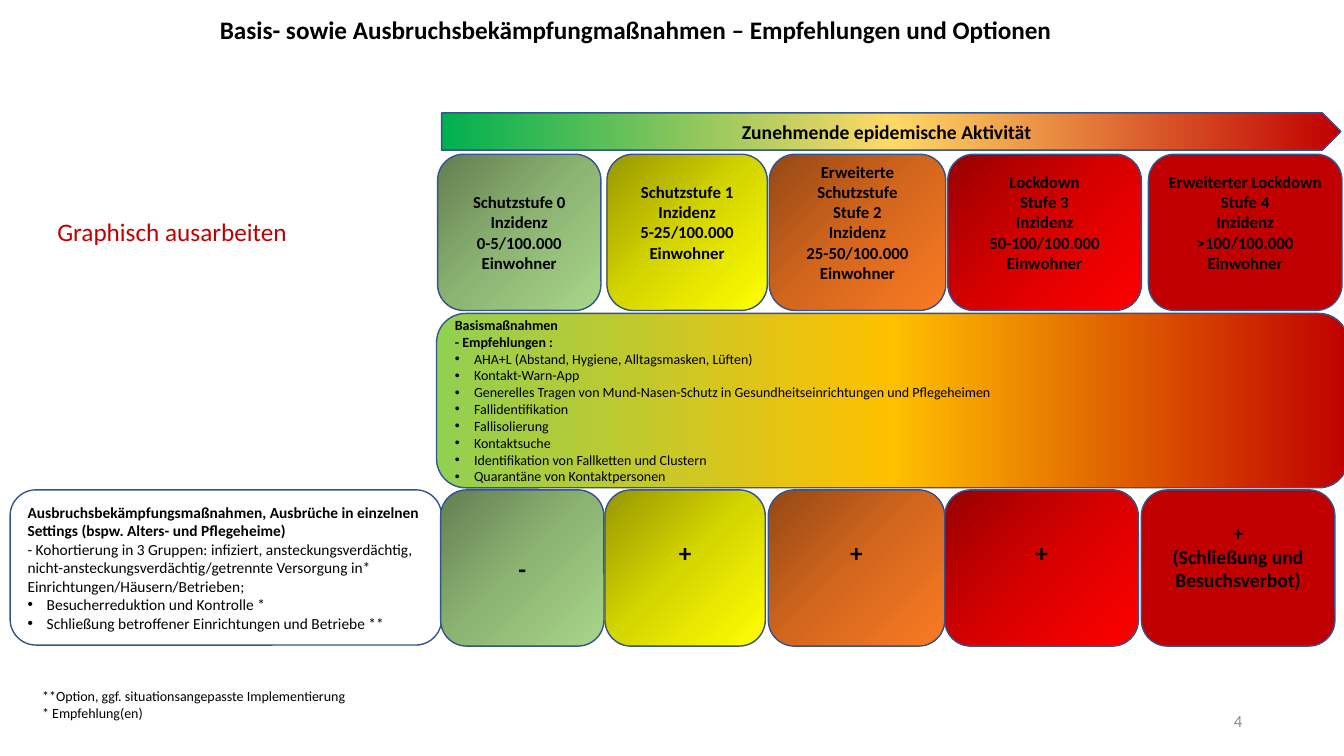
from lxml import etree
from pptx import Presentation
from pptx.dml.color import RGBColor
from pptx.enum.shapes import MSO_SHAPE
from pptx.enum.text import MSO_ANCHOR, MSO_AUTO_SIZE, PP_ALIGN
from pptx.oxml.ns import qn
from pptx.util import Inches, Pt

ROUNDED = MSO_SHAPE.ROUNDED_RECTANGLE
ARROW_BAR = MSO_SHAPE.PENTAGON
LEFT, CENTER, RIGHT = PP_ALIGN.LEFT, PP_ALIGN.CENTER, PP_ALIGN.RIGHT
TOP, MIDDLE = MSO_ANCHOR.TOP, MSO_ANCHOR.MIDDLE
NO_FIT = MSO_AUTO_SIZE.NONE

COLORS = {
    "text": "000000", "outline": "325491", "white": "FFFFFF",
    "red": "C00000", "page": "8C8C8C",
}
LEVEL_FILLS = [
    ["637F51", "8DB473", "A8D689"],
    ["979700", "D7D700", "FFFF00"],
    ["954815", "D4671D", "FB7A23"],
    ["970000", "D70000", "FF0000"],
    [COLORS["red"]],
]
ACTIVITY_FILL = ["00B050", "FFD966", "C00000"]
BASIC_FILL = ["92D050", "FFC000", "C00000"]

LEVEL_WIDTHS = [1.62, 1.59, 1.75, 1.92, 1.92]
HEADING_LEFTS = [4.34, 6.02, 7.63, 9.4, 11.39]
RATING_LEFTS = [4.37, 6, 7.62, 9.37, 11.32]
LEVEL_HEIGHT = 1.55

LEVELS = [
    (["Schutzstufe 0"], "0-5/100.000"),
    (["Schutzstufe 1"], "5-25/100.000"),
    (["Erweiterte Schutzstufe", "Stufe 2"], "25-50/100.000"),
    (["Lockdown", "Stufe 3"], "50-100/100.000"),
    (["Erweiterter Lockdown", "Stufe 4"], "˃100/100.000"),
]
RATINGS = [
    (["-"], 18), (["+"], 18), (["+"], 18), (["+"], 18),
    (["+", "(Schließung und Besuchsverbot)"], 14),
]
BASIC_MEASURES = [
    "AHA+L (Abstand, Hygiene, Alltagsmasken, Lüften)",
    "Kontakt-Warn-App",
    "Generelles Tragen von Mund-Nasen-Schutz in Gesundheitseinrichtungen und Pflegeheimen",
    "Fallidentifikation",
    "Fallisolierung",
    "Kontaktsuche",
    "Identifikation von Fallketten und Clustern",
    "Quarantäne von Kontaktpersonen",
]


def write(frame, lines, size, color="text", bold=False, align=LEFT, bullet=False):
    """Append lines to a text frame in one format."""
    for line in lines:
        paragraph = frame.paragraphs[0]
        if paragraph.runs:
            paragraph = frame.add_paragraph()
        paragraph.alignment = align
        run = paragraph.add_run()
        run.text = line
        run.font.name = "Calibri"
        run.font.size = Pt(size)
        run.font.bold = bold
        run.font.color.rgb = RGBColor.from_string(COLORS[color])
        if bullet:
            properties = paragraph._p.get_or_add_pPr()
            indent = Inches(0.19)
            properties.set("marL", str(indent))
            properties.set("indent", str(-indent))
            etree.SubElement(properties, qn("a:buFont")).set("typeface", "Arial")
            etree.SubElement(properties, qn("a:buChar")).set("char", "•")


def paint(shape, colors, angle):
    """Fill a shape with one colour or an evenly spaced gradient."""
    if len(colors) == 1:
        shape.fill.solid()
        shape.fill.fore_color.rgb = RGBColor.from_string(colors[0])
        return
    shape.fill.gradient()
    shape.fill.gradient_angle = 360 - angle
    stops = shape._element.spPr.find(".//" + qn("a:gsLst"))
    for stop in list(stops):
        stops.remove(stop)
    for index, color in enumerate(colors):
        stop = etree.SubElement(stops, qn("a:gs"))
        stop.set("pos", str(index * 100000 // (len(colors) - 1)))
        etree.SubElement(stop, qn("a:srgbClr")).set("val", color)


def add_panel(slide, box, colors, angle=45, kind=ROUNDED):
    """Draw an outlined panel and return its text frame."""
    panel = slide.shapes.add_shape(kind, *map(Inches, box))
    panel.shadow.inherit = False
    paint(panel, colors, angle)
    panel.line.color.rgb = RGBColor.from_string(COLORS["outline"])
    panel.line.width = Pt(1)
    panel.text_frame.word_wrap = True
    panel.text_frame.vertical_anchor = MIDDLE
    return panel.text_frame


def add_label(slide, box, lines, size, wrap=False, anchor=TOP, **style):
    """Place free text in a box."""
    frame = slide.shapes.add_textbox(*map(Inches, box)).text_frame
    frame.word_wrap = wrap
    frame.vertical_anchor = anchor
    write(frame, lines, size, **style)


def add_title(slide, box):
    """Format the title placeholder within its box."""
    title = slide.shapes.title
    title.left, title.top, title.width, title.height = map(Inches, box)
    frame = title.text_frame
    frame.auto_size = NO_FIT
    frame.vertical_anchor = TOP
    heading = "Basis- sowie Ausbruchsbekämpfungmaßnahmen – Empfehlungen und Optionen"
    write(frame, [heading], 18, bold=True)


def add_level_row(slide, top, lefts, cells):
    """Draw one row of level panels, text raised by half a line after the first."""
    for index, (lines, size) in enumerate(cells):
        box = (lefts[index], top, LEVEL_WIDTHS[index], LEVEL_HEIGHT)
        frame = add_panel(slide, box, LEVEL_FILLS[index])
        if index:
            frame.margin_bottom = Inches(0.05) + Pt(size * 1.2)
        write(frame, lines, size, bold=True, align=CENTER)


def add_activity_bar(slide, box):
    """Draw the arrow bar of rising activity."""
    frame = add_panel(slide, box, ACTIVITY_FILL, 0, ARROW_BAR)
    write(frame, ["Zunehmende epidemische Aktivität"], 14, bold=True, align=CENTER)


def add_basic_measures(slide, box):
    """Draw the panel of basic measures."""
    frame = add_panel(slide, box, BASIC_FILL, 0)
    write(frame, ["Basismaßnahmen", "- Empfehlungen :"], 10, bold=True)
    write(frame, BASIC_MEASURES, 10, bullet=True)


def add_outbreak_measures(slide, box):
    """Draw the panel of outbreak measures."""
    frame = add_panel(slide, box, [COLORS["white"]])
    write(frame, ["Ausbruchsbekämpfungsmaßnahmen, Ausbrüche in einzelnen "
                  "Settings (bspw. Alters- und Pflegeheime)"], 11, bold=True)
    write(frame, ["- Kohortierung in 3 Gruppen: infiziert, ansteckungsverdächtig, "
                  "nicht-ansteckungsverdächtig/getrennte Versorgung in* "
                  "Einrichtungen/Häusern/Betrieben;"], 11)
    write(frame, ["Besucherreduktion und Kontrolle *",
                  "Schließung betroffener Einrichtungen und Betriebe **"], 11, bullet=True)


def main():
    """Build and save the slide."""
    deck = Presentation()
    deck.slide_width, deck.slide_height = Inches(13.33), Inches(7.5)
    slide = deck.slides.add_slide(deck.slide_layouts[5])

    headings = [(names + ["Inzidenz", rate, "Einwohner"], 12) for names, rate in LEVELS]
    add_title(slide, (2.08, 0.09, 9.45, 0.4))
    add_level_row(slide, 1.53, HEADING_LEFTS, headings)
    add_activity_bar(slide, (4.38, 1.12, 8.92, 0.37))
    add_basic_measures(slide, (4.33, 3.11, 9.04, 1.73))
    add_outbreak_measures(slide, (0.1, 4.86, 4.28, 1.54))
    add_level_row(slide, 4.86, RATING_LEFTS, RATINGS)
    add_label(slide, (0.32, 6.77, 3.26, 0.44),
              ["**Option, ggf. situationsangepasste Implementierung", "* Empfehlung(en)"], 10)
    add_label(slide, (0.47, 2.1, 2.5, 0.4), ["Graphisch ausarbeiten"], 18, color="red")
    add_label(slide, (9.42, 6.95, 3, 0.4), ["4"], 12, wrap=True, anchor=MIDDLE,
              color="page", align=RIGHT)
    deck.save("out.pptx")


if __name__ == "__main__":
    main()
